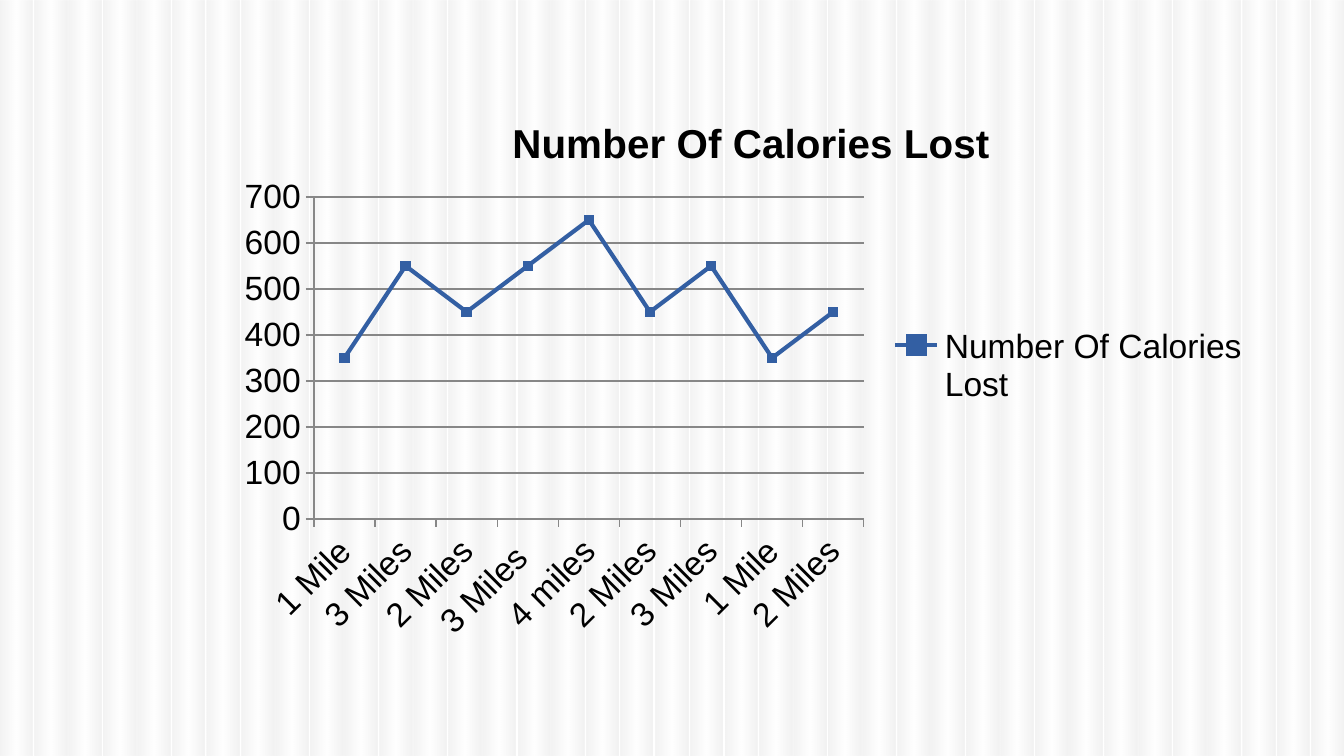
from dataclasses import dataclass

from lxml.etree import fromstring
from pptx import Presentation
from pptx.chart.chart import Chart
from pptx.chart.data import CategoryChartData
from pptx.dml.color import RGBColor
from pptx.enum.chart import XL_CHART_TYPE, XL_LEGEND_POSITION, XL_MARKER_STYLE, XL_TICK_MARK
from pptx.enum.shapes import MSO_SHAPE
from pptx.oxml import parse_xml
from pptx.oxml.ns import nsdecls, qn
from pptx.util import Emu, Pt

PX_PER_INCH = 134.4
FONT = "Arial"
COLORS = {
    "paper": "FFFFFF",
    "stripe": "BFBFBF",
    "text": "000000",
    "grid": "878787",
    "calories": "335FA3",
}
TITLE = "Number Of Calories Lost"
RUNS = [
    ("1 Mile", 350), ("3 Miles", 550), ("2 Miles", 450),
    ("3 Miles ", 550), ("4 miles", 650), ("2 Miles", 450),
    ("3 Miles", 550), ("1 Mile", 350), ("2 Miles", 450),
]
STRIPE_COUNT = 39
LAST_STRIPE_LEFT = 1312


@dataclass
class Box:
    left: int
    top: int
    width: int
    height: int

    def emu(self) -> tuple:
        return tuple(map(px, (self.left, self.top, self.width, self.height)))


SLIDE = Box(0, 0, 1344, 756)
CHART = Box(224, 79, 1040, 574)
PLOT = Box(314, 197, 550, 322)
HEADING = Box(505, 110, 477, 46)


def px(length: int) -> Emu:
    return Emu(round(length * 914400 / PX_PER_INCH))


def rgb(name: str) -> RGBColor:
    return RGBColor.from_string(COLORS[name])


def style_font(font, size: float = 18, bold: bool = False, color: str = "text") -> None:
    font.name, font.size, font.bold = FONT, Pt(size), bold
    font.color.rgb = rgb(color)


def write_text(frame, text: str, **style) -> None:
    run = frame.paragraphs[0].add_run()
    run.text = text
    style_font(run.font, **style)


def draw_stripe(slide, box: Box) -> None:
    """Draw a translucent band that is lightest in the middle."""
    band = slide.shapes.add_shape(MSO_SHAPE.RECTANGLE, *box.emu())
    band.shadow.inherit = False
    band.line.fill.background()
    band.fill.background()
    stops = "".join(
        f'<a:gs pos="{position * 1000}"><a:srgbClr val="{COLORS[color]}">'
        '<a:alpha val="19000"/></a:srgbClr></a:gs>'
        for position, color in [(0, "stripe"), (50, "paper"), (97, "stripe"), (100, "stripe")]
    )
    gradient = fromstring(
        f'<a:gradFill {nsdecls("a")} rotWithShape="1"><a:gsLst>{stops}</a:gsLst>'
        '<a:lin ang="0" scaled="0"/></a:gradFill>'
    )
    properties = band._element.spPr
    properties.replace(properties.find(qn("a:noFill")), gradient)


def set_layout(part, index: int, box: Box, target: str = "", sized: bool = False) -> None:
    """Fix a chart part at its place within the chart frame."""
    for layout in part.findall(qn("c:layout")):
        part.remove(layout)
    values = {
        "x": (box.left - CHART.left) / CHART.width,
        "y": (box.top - CHART.top) / CHART.height,
    }
    if sized:
        values |= {"w": box.width / CHART.width, "h": box.height / CHART.height}
    modes = '<c:xMode val="edge"/><c:yMode val="edge"/>'
    places = "".join(f'<c:{key} val="{value:.4f}"/>' for key, value in values.items())
    part.insert(index, parse_xml(
        f'<c:layout {nsdecls("c")}><c:manualLayout>{target}{modes}{places}'
        "</c:manualLayout></c:layout>"
    ))


def style_axis(axis) -> None:
    style_font(axis.tick_labels.font)
    axis.major_tick_mark = XL_TICK_MARK.OUTSIDE
    axis.minor_tick_mark = XL_TICK_MARK.NONE
    axis.format.line.color.rgb = rgb("grid")
    axis.format.line.width = Pt(0.75)


def style_axes(chart: Chart) -> None:
    miles, calories = chart.category_axis, chart.value_axis
    style_axis(miles)
    style_axis(calories)
    miles._element.find(qn("c:txPr")).find(qn("a:bodyPr")).set("rot", str(-45 * 60000))
    calories.minimum_scale, calories.maximum_scale, calories.major_unit = 0, 700, 100
    calories.has_major_gridlines = True
    calories.major_gridlines.format.line.color.rgb = rgb("grid")
    calories.major_gridlines.format.line.width = Pt(0.75)


def style_series(series) -> None:
    series.smooth = False
    series.format.line.color.rgb = rgb("calories")
    series.format.line.width = Pt(2.25)
    series.marker.style = XL_MARKER_STYLE.SQUARE
    series.marker.size = 5
    series.marker.format.fill.solid()
    series.marker.format.fill.fore_color.rgb = rgb("calories")
    series.marker.format.line.color.rgb = rgb("calories")


def draw_chart(slide) -> None:
    data = CategoryChartData()
    data.categories = [distance for distance, _ in RUNS]
    data.add_series(TITLE, [burned for _, burned in RUNS])
    chart = slide.shapes.add_chart(XL_CHART_TYPE.LINE_MARKERS, *CHART.emu(), data).chart
    style_font(chart.font)
    chart.plots[0].vary_by_categories = False
    style_axes(chart)
    style_series(chart.plots[0].series[0])

    # Heading and legend
    chart.has_title = True
    write_text(chart.chart_title.text_frame, TITLE, size=21.6, bold=True)
    set_layout(chart.chart_title._element, 1, HEADING)
    chart.has_legend = True
    chart.legend.position = XL_LEGEND_POSITION.RIGHT
    chart.legend.include_in_layout = False
    style_font(chart.legend.font)

    # Plot area
    plot_area = chart._chartSpace.chart.plotArea
    set_layout(plot_area, 0, PLOT, target='<c:layoutTarget val="inner"/>', sized=True)


def main() -> None:
    deck = Presentation()
    deck.slide_width, deck.slide_height = px(SLIDE.width), px(SLIDE.height)
    slide = deck.slides.add_slide(deck.slide_layouts[6])

    # Striped background
    slide.background.fill.solid()
    slide.background.fill.fore_color.rgb = rgb("paper")
    for number in range(STRIPE_COUNT):
        left = round(number * LAST_STRIPE_LEFT / (STRIPE_COUNT - 1))
        draw_stripe(slide, Box(left, 1, 32, 755))

    # Calories by distance
    draw_chart(slide)
    deck.save("out.pptx")


if __name__ == "__main__":
    main()
